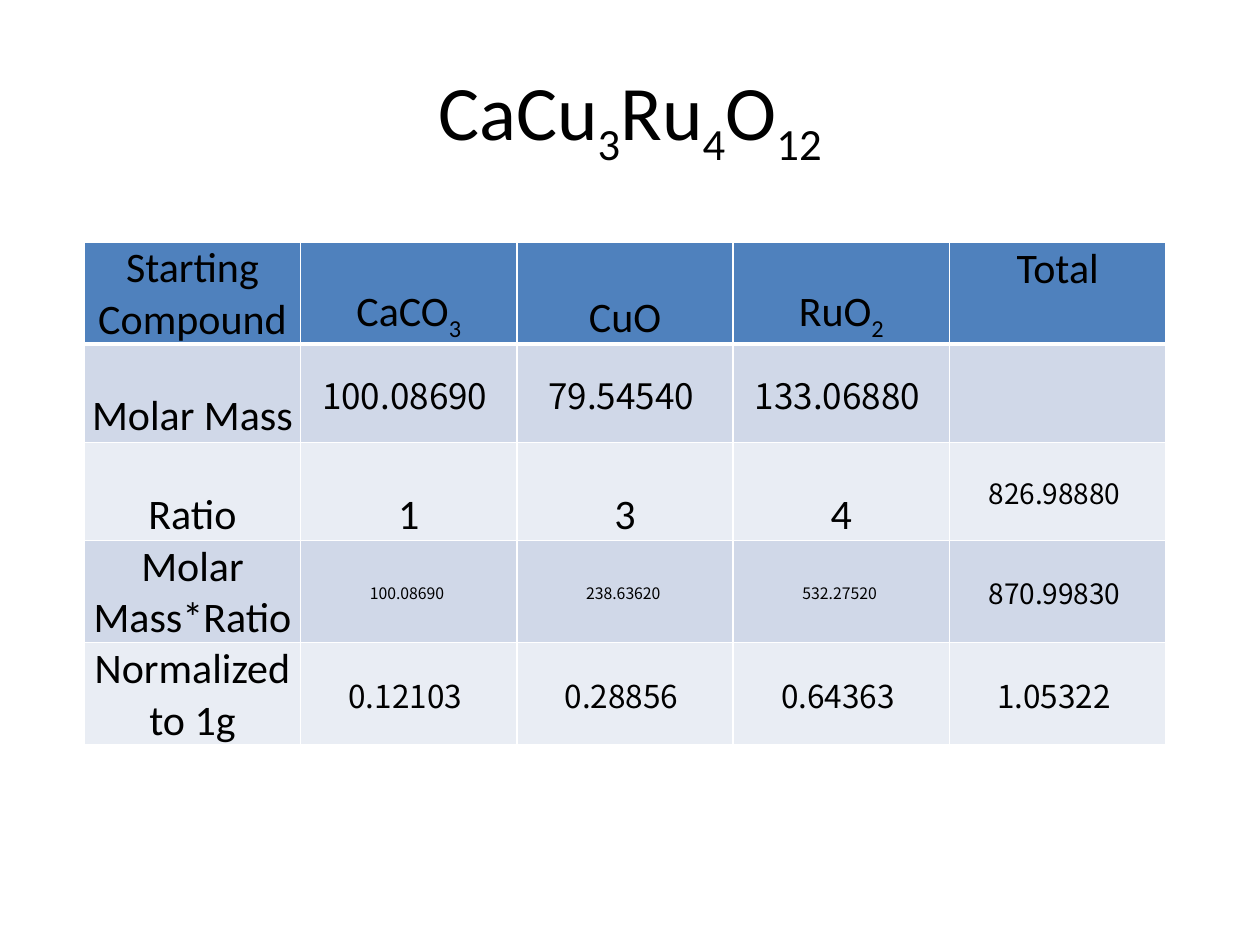
from dataclasses import dataclass

from lxml import etree
from pptx import Presentation
from pptx.dml.color import RGBColor
from pptx.enum.text import MSO_ANCHOR, PP_ALIGN
from pptx.oxml.ns import qn
from pptx.util import Pt

CENTER = PP_ALIGN.CENTER
TOP, MIDDLE, BOTTOM = MSO_ANCHOR.TOP, MSO_ANCHOR.MIDDLE, MSO_ANCHOR.BOTTOM

BLACK = RGBColor(0x00, 0x00, 0x00)
WHITE = RGBColor(0xFF, 0xFF, 0xFF)
HEADER_BLUE = RGBColor(0x4F, 0x81, 0xBD)
BANDS = (RGBColor(0xD0, 0xD8, 0xE8), RGBColor(0xE9, 0xED, 0xF4))

LABEL_FONT, NUMBER_FONT = "Calibri", "Noto Sans CJK KR"
SUBSCRIPT = "-25000"
COLUMN_WIDTH, ROW_HEIGHT = 123.6, 56.2


@dataclass(frozen=True)
class Entry:
    """Text of one cell; every second part between underscores is a subscript."""
    text: str
    size: float = 24
    font: str = LABEL_FONT
    anchor: MSO_ANCHOR = BOTTOM


def number(text: str, size: float) -> Entry:
    # The trailing space belongs to the accounting number format
    return Entry(text + " ", size, NUMBER_FONT, MIDDLE)


ROWS = (
    (Entry("Starting Compound"), Entry("CaCO_3"), Entry("CuO"), Entry("RuO_2"),
     Entry("Total", anchor=TOP)),
    (Entry("Molar Mass"), number("100.08690", 20), number("79.54540", 20),
     number("133.06880", 20), None),
    (Entry("Ratio"), Entry("1"), Entry("3"), Entry("4"), number("826.98880", 16)),
    (Entry("Molar Mass*Ratio"), number("100.08690", 9), number("238.63620", 9),
     number("532.27520", 9), number("870.99830", 16)),
    (Entry("Normalized to 1g"), number("0.12103", 18), number("0.28856", 18),
     number("0.64363", 18), number("1.05322", 18)),
)


def write(paragraph, entry: Entry) -> None:
    paragraph.alignment = CENTER
    for index, part in enumerate(entry.text.split("_")):
        span = paragraph.add_run()
        span.text = part
        span.font.name = entry.font
        span.font.size = Pt(entry.size)
        span.font.bold = False
        span.font.color.rgb = BLACK
        properties = span.font._element
        if entry.font == NUMBER_FONT:
            etree.SubElement(properties, qn("a:ea")).set("typeface", entry.font)
        if index % 2:
            properties.set("baseline", SUBSCRIPT)


def set_borders(cell, bottom_width: float) -> None:
    properties = cell._tc.get_or_add_tcPr()
    widths = {"a:lnL": 1, "a:lnR": 1, "a:lnT": 1, "a:lnB": bottom_width}
    for index, (tag, width) in enumerate(widths.items()):
        line = etree.Element(qn(tag), w=str(Pt(width)))
        fill = etree.SubElement(line, qn("a:solidFill"))
        etree.SubElement(fill, qn("a:srgbClr"), val=str(WHITE))
        properties.insert(index, line)


def add_title(page, entry: Entry) -> None:
    box = page.shapes.add_textbox(Pt(36), Pt(21.6), Pt(648), Pt(90))
    frame = box.text_frame
    frame.word_wrap = True
    frame.vertical_anchor = entry.anchor
    write(frame.paragraphs[0], entry)


def add_compound_table(page) -> None:
    row_count, column_count = len(ROWS), len(ROWS[0])
    table = page.shapes.add_table(
        row_count, column_count, Pt(48.2), Pt(138.2),
        Pt(COLUMN_WIDTH * column_count), Pt(ROW_HEIGHT * row_count)).table
    for column in table.columns:
        column.width = Pt(COLUMN_WIDTH)
    for row_index, entries in enumerate(ROWS):
        table.rows[row_index].height = Pt(ROW_HEIGHT)
        is_header = row_index == 0
        for column_index, entry in enumerate(entries):
            cell = table.cell(row_index, column_index)
            cell.fill.solid()
            cell.fill.fore_color.rgb = (
                HEADER_BLUE if is_header else BANDS[(row_index - 1) % 2])
            set_borders(cell, 3 if is_header else 1)
            if entry is None:
                continue
            cell.margin_left = cell.margin_right = cell.margin_top = Pt(0.75)
            cell.margin_bottom = Pt(0)
            cell.vertical_anchor = entry.anchor
            write(cell.text_frame.paragraphs[0], entry)


def main() -> None:
    deck = Presentation()
    deck.slide_width, deck.slide_height = Pt(720), Pt(540)
    page = deck.slides.add_slide(deck.slide_layouts[6])
    # Title formula
    add_title(page, Entry("CaCu_3_Ru_4_O_12", 44, anchor=MIDDLE))
    # Starting compounds and their masses
    add_compound_table(page)
    deck.save("out.pptx")


if __name__ == "__main__":
    main()
